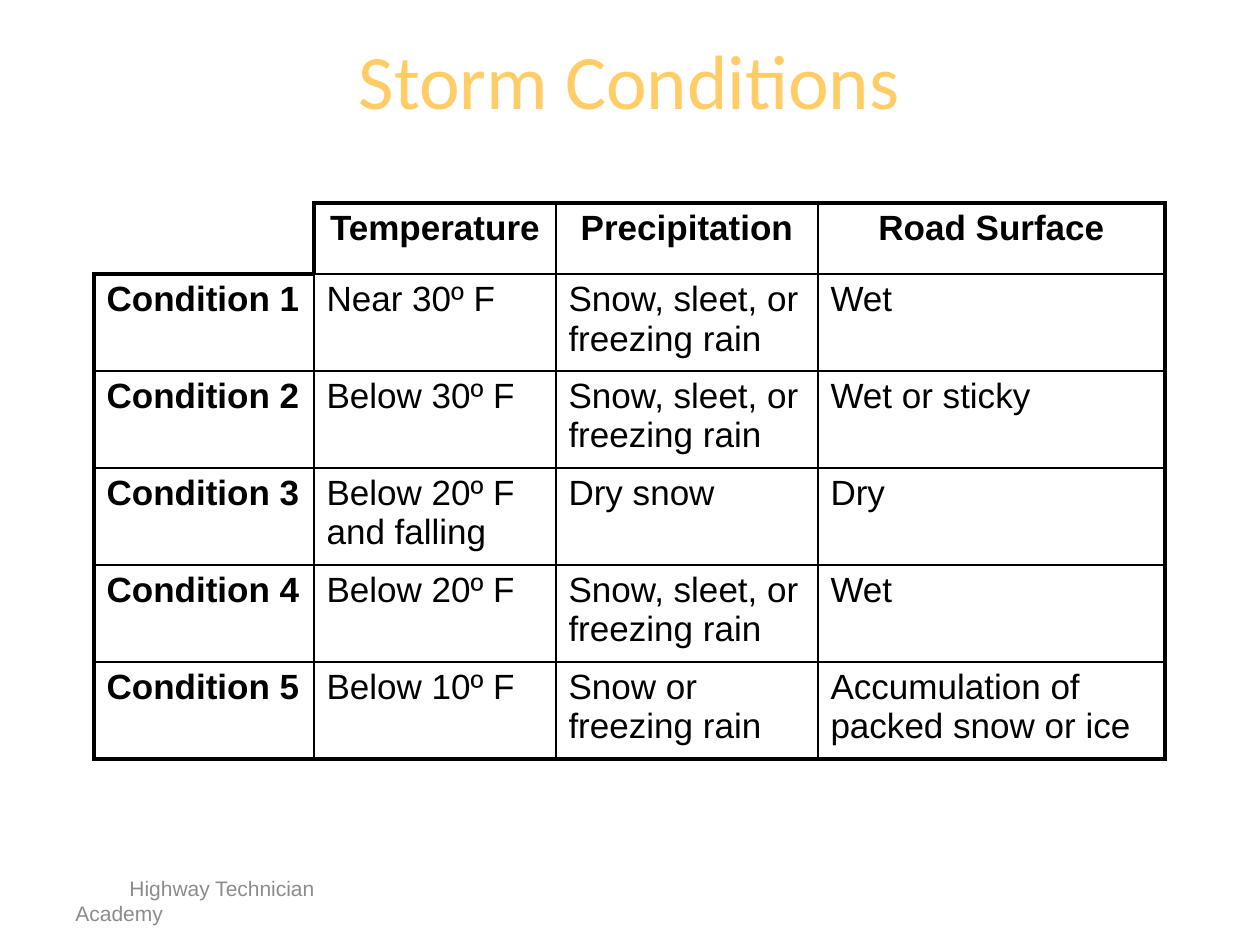
from lxml.etree import SubElement
from pptx import Presentation
from pptx.dml.color import RGBColor
from pptx.enum.text import MSO_ANCHOR as ANCHOR, PP_ALIGN as ALIGN
from pptx.oxml.ns import qn
from pptx.util import Pt

PX = 914400 // 126
BLACK, GOLD, GREY = "000000", "FFCC66", "8C8C8C"
THIN, THICK = Pt(1), Pt(2.25)

COL_WIDTHS = [220, 242, 262, 347]
HEADER_HEIGHT, ROW_HEIGHT = 71, 97
CONDITIONS = [
    ["", "Temperature", "Precipitation", "Road Surface"],
    ["Condition 1", "Near 30º F", "Snow, sleet, or freezing rain", "Wet"],
    ["Condition 2", "Below 30º F", "Snow, sleet, or freezing rain", "Wet or sticky"],
    ["Condition 3", "Below 20º F and falling", "Dry snow", "Dry"],
    ["Condition 4", "Below 20º F", "Snow, sleet, or freezing rain", "Wet"],
    ["Condition 5", "Below 10º F", "Snow or freezing rain",
     "Accumulation of packed snow or ice"],
]
SIDES = {"a:lnL": (0, -1), "a:lnR": (0, 1), "a:lnT": (-1, 0), "a:lnB": (1, 0)}


def px(*lengths):
    return [n * PX for n in lengths]


def rgb(color):
    return RGBColor.from_string(color)


def write(tf, text, size, color, font="Arial", bold=False, align=ALIGN.LEFT):
    tf.text = text
    p = tf.paragraphs[0]
    p.alignment = align
    for r in p.runs:
        r.font.name, r.font.size, r.font.bold = font, Pt(size), bold
        r.font.color.rgb = rgb(color)
    return p


def add_title(slide, box):
    sp = slide.shapes.title
    sp.left, sp.top, sp.width, sp.height = px(*box)
    sp.text_frame.vertical_anchor = ANCHOR.MIDDLE
    write(sp.text_frame, "Storm Conditions", 44, GOLD, "Calibri", align=ALIGN.CENTER)


def has_text(row, col):
    inside = 0 <= row < len(CONDITIONS) and 0 <= col < len(COL_WIDTHS)
    return inside and CONDITIONS[row][col] != ""


def set_borders(cell, row, col):
    """Thin between filled cells, thick around them, none elsewhere."""
    tc_pr = cell._tc.get_or_add_tcPr()
    for tag, (dr, dc) in SIDES.items():
        filled = has_text(row, col) + has_text(row + dr, col + dc)
        ln = SubElement(tc_pr, qn(tag), w=str(THIN if filled == 2 else THICK))
        if filled:
            fill = SubElement(ln, qn("a:solidFill"))
            SubElement(fill, qn("a:srgbClr"), val=BLACK)
        else:
            SubElement(ln, qn("a:noFill"))


def add_conditions_table(slide, left, top):
    heights = [HEADER_HEIGHT] + [ROW_HEIGHT] * (len(CONDITIONS) - 1)
    box = px(left, top, sum(COL_WIDTHS), sum(heights))
    table = slide.shapes.add_table(len(heights), len(COL_WIDTHS), *box).table
    table.first_row = table.horz_banding = False
    for column, width in zip(table.columns, px(*COL_WIDTHS)):
        column.width = width
    for row, height in zip(table.rows, px(*heights)):
        row.height = height

    for i, texts in enumerate(CONDITIONS):
        for j, text in enumerate(texts):
            cell = table.cell(i, j)
            p = write(cell.text_frame, text, 20, BLACK, bold=i == 0 or j == 0,
                      align=ALIGN.CENTER if i == 0 else ALIGN.LEFT)
            # Space before as a share of the line height
            before = SubElement(p._p.get_or_add_pPr(), qn("a:spcBef"))
            SubElement(before, qn("a:spcPct"), val="20000")
            set_borders(cell, i, j)
            cell.fill.background()


def add_footer(slide, box):
    tf = slide.shapes.add_textbox(*px(*box)).text_frame
    tf.word_wrap = True
    tf.vertical_anchor = ANCHOR.MIDDLE
    p = write(tf, "Highway Technician Academy", 12, GREY)
    p._p.get_or_add_pPr().set("indent", str(54 * PX))


def main():
    prs = Presentation()
    prs.slide_width, prs.slide_height = px(1260, 945)
    slide = prs.slides.add_slide(prs.slide_layouts[5])
    add_footer(slide, (63, 876, 294, 50))
    add_title(slide, (94, 0, 1071, 158))
    add_conditions_table(slide, 94, 203)
    prs.save("out.pptx")


if __name__ == "__main__":
    main()
